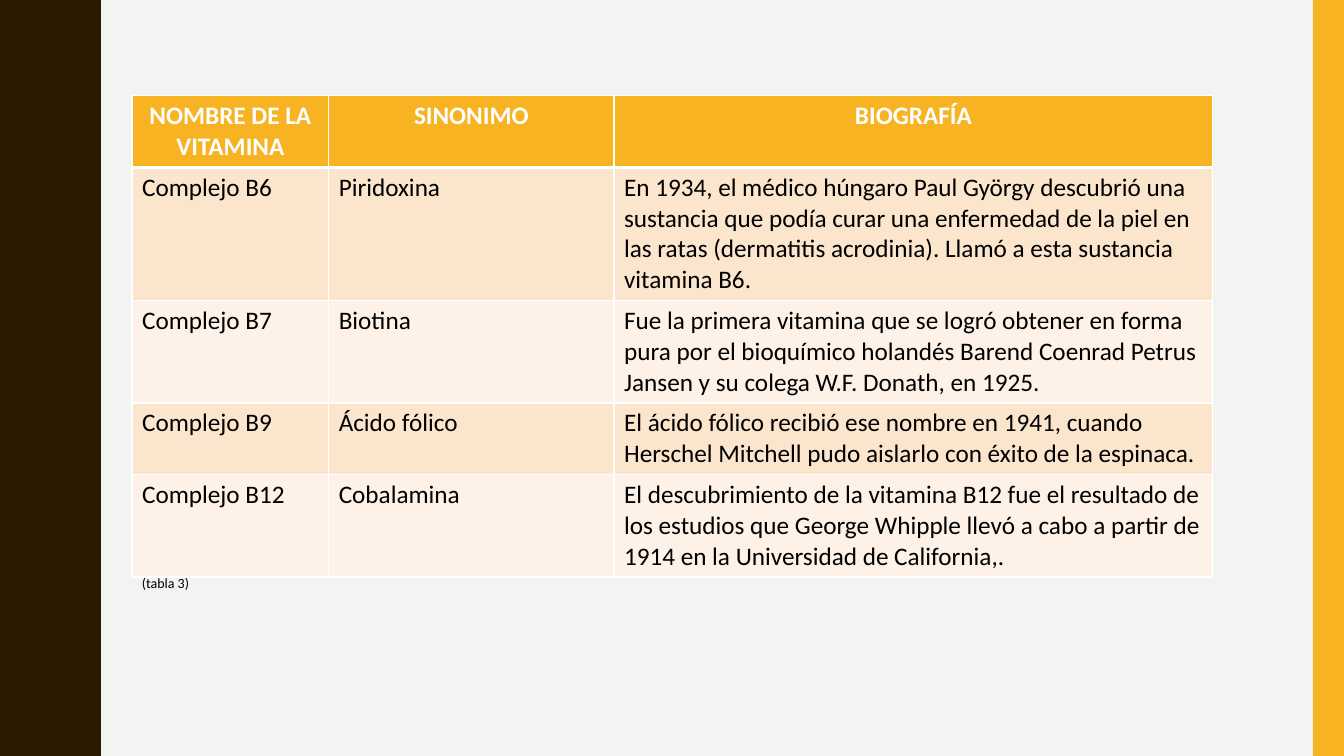
from typing import NamedTuple

from lxml import etree
from pptx import Presentation
from pptx.dml.color import RGBColor
from pptx.enum import shapes, text
from pptx.oxml import ns
from pptx.util import Inches, Pt

COLORS = {
    "background": "F3F3F2",
    "wave": "2A1A00",
    "accent": "F8B323",
    "odd_row": "FCE5CD",
    "even_row": "FEF2E8",
    "white": "FFFFFF",
    "black": "000000",
}
FONT = "Calibri"
SLIDE_WIDTH, SLIDE_HEIGHT = 13.33, 7.5

WAVE_PERIOD = 1.5
WAVE_COUNT = 5
# Outline from a trough of the wave to its next crest
RISING_EDGE = [
    (0.78, 0), (0.78, 0.07), (0.79, 0.14), (0.8, 0.2), (0.81, 0.25),
    (0.83, 0.29), (0.85, 0.33), (0.87, 0.38), (0.89, 0.42), (0.91, 0.46),
    (0.93, 0.5), (0.95, 0.55), (0.96, 0.61), (0.97, 0.68), (0.97, 0.75),
]

TABLE_LEFT, TABLE_TOP = 1.31, 0.95
COLUMN_WIDTHS = [1.95, 2.83, 5.94]
HEADERS = ("NOMBRE DE LA VITAMINA", "SINONIMO", "BIOGRAFÍA")


class Vitamin(NamedTuple):
    name: str
    synonym: str
    biography: str


VITAMINS = [
    Vitamin("Complejo B6", "Piridoxina",
            "En 1934, el médico húngaro Paul György descubrió una sustancia que podía "
            "curar una enfermedad de la piel en las ratas (dermatitis acrodinia). "
            "Llamó a esta sustancia vitamina B6."),
    Vitamin("Complejo B7", "Biotina",
            "Fue la primera vitamina que se logró obtener en forma pura por el bioquímico "
            "holandés Barend Coenrad Petrus Jansen y su colega W.F. Donath, en 1925."),
    Vitamin("Complejo B9", "Ácido fólico",
            "El ácido fólico recibió ese nombre en 1941, cuando Herschel Mitchell pudo "
            "aislarlo con éxito de la espinaca."),
    Vitamin("Complejo B12", "Cobalamina",
            "El descubrimiento de la vitamina B12 fue el resultado de los estudios que "
            "George Whipple llevó a cabo a partir de 1914 en la Universidad de California,."),
]
ROW_HEIGHTS = [0.7, 1.3, 1.0, 0.7, 1.0]


def rgb(name: str) -> RGBColor:
    return RGBColor.from_string(COLORS[name])


def paint(shape, color: str) -> None:
    """Give the shape a plain fill without line or shadow."""
    shape.fill.solid()
    shape.fill.fore_color.rgb = rgb(color)
    shape.line.fill.background()
    shape.shadow.inherit = False


def style_text(text_frame, size: float, color: str, bold: bool = False) -> None:
    for paragraph in text_frame.paragraphs:
        for run in paragraph.runs:
            run.font.name = FONT
            run.font.size = Pt(size)
            run.font.bold = bold
            run.font.color.rgb = rgb(color)


def add_wave(slide) -> None:
    falling_edge = [(x, WAVE_PERIOD - y) for x, y in reversed(RISING_EDGE[1:-1])]
    points = [(x, y + index * WAVE_PERIOD)
              for index in range(WAVE_COUNT)
              for x, y in RISING_EDGE + falling_edge]
    points += [(RISING_EDGE[0][0], SLIDE_HEIGHT), (0, SLIDE_HEIGHT)]
    builder = slide.shapes.build_freeform(0, 0, scale=Inches(1))
    builder.add_line_segments(points, close=True)
    paint(builder.convert_to_shape(), "wave")


def add_side_band(slide) -> None:
    band = slide.shapes.add_shape(
        shapes.MSO_SHAPE.RECTANGLE, Inches(13.02), 0, Inches(0.31), Inches(SLIDE_HEIGHT))
    paint(band, "accent")


def set_borders(cell, top: float, bottom: float) -> None:
    """Draw white borders, 1 pt at the sides; call before the cell is filled."""
    properties = cell._tc.get_or_add_tcPr()
    for side, width in (("L", 1), ("R", 1), ("T", top), ("B", bottom)):
        line = etree.SubElement(properties, ns.qn(f"a:ln{side}"), w=str(Pt(width)))
        fill = etree.SubElement(line, ns.qn("a:solidFill"))
        etree.SubElement(fill, ns.qn("a:srgbClr"), val=COLORS["white"])


def add_vitamin_table(slide) -> None:
    rows = [HEADERS, *VITAMINS]
    table = slide.shapes.add_table(
        len(rows), len(HEADERS), Inches(TABLE_LEFT), Inches(TABLE_TOP),
        Inches(sum(COLUMN_WIDTHS)), Inches(sum(ROW_HEIGHTS))).table
    for column, width in zip(table.columns, COLUMN_WIDTHS):
        column.width = Inches(width)
    for row_index, (row, height) in enumerate(zip(rows, ROW_HEIGHTS)):
        table.rows[row_index].height = Inches(height)
        is_header = row_index == 0
        row_color = "accent" if is_header else ("even_row", "odd_row")[row_index % 2]
        for column_index, content in enumerate(row):
            cell = table.cell(row_index, column_index)
            set_borders(cell, top=3 if row_index == 1 else 1, bottom=3 if is_header else 1)
            cell.fill.solid()
            cell.fill.fore_color.rgb = rgb(row_color)
            cell.text_frame.text = content
            style_text(cell.text_frame, 18, "white" if is_header else "black", is_header)
            if is_header:
                cell.text_frame.paragraphs[0].alignment = text.PP_ALIGN.CENTER


def add_caption(slide) -> None:
    caption = slide.shapes.add_textbox(
        Inches(TABLE_LEFT), Inches(5.65), Inches(0.67), Inches(0.27))
    text_frame = caption.text_frame
    text_frame.word_wrap = False
    text_frame.auto_size = text.MSO_AUTO_SIZE.SHAPE_TO_FIT_TEXT
    text_frame.text = "(tabla 3)"
    style_text(text_frame, 10, "black")


def main() -> None:
    presentation = Presentation()
    presentation.slide_width = Inches(SLIDE_WIDTH)
    presentation.slide_height = Inches(SLIDE_HEIGHT)
    slide = presentation.slides.add_slide(presentation.slide_layouts[6])
    slide.background.fill.solid()
    slide.background.fill.fore_color.rgb = rgb("background")
    add_wave(slide)
    add_side_band(slide)
    add_vitamin_table(slide)
    add_caption(slide)
    presentation.save("out.pptx")


if __name__ == "__main__":
    main()
